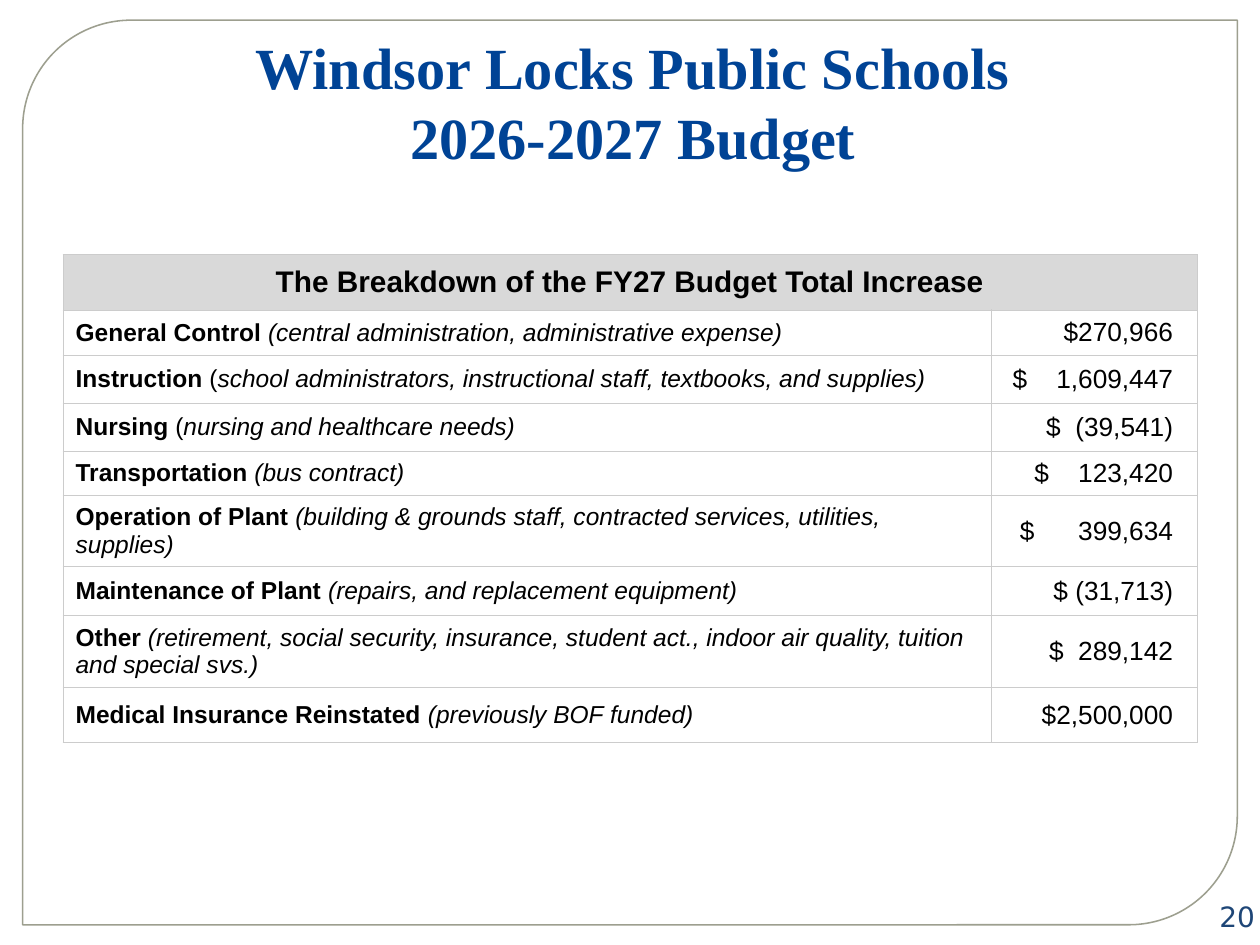
from lxml.etree import SubElement
from pptx import Presentation
from pptx.dml.color import RGBColor
from pptx.enum.shapes import MSO_SHAPE
from pptx.enum.text import MSO_ANCHOR, MSO_AUTO_SIZE, PP_ALIGN
from pptx.oxml.ns import qn
from pptx.util import Inches, Pt

BLACK = RGBColor(0x00, 0x00, 0x00)
WHITE = RGBColor(0xFF, 0xFF, 0xFF)
BLUE = RGBColor(0x00, 0x43, 0x95)
NAVY = RGBColor(0x1E, 0x46, 0x77)
OLIVE = RGBColor(0x9D, 0x9F, 0x8F)
GRAY = RGBColor(0xD9, 0xD9, 0xD9)
RULE = RGBColor(0xCC, 0xCC, 0xCC)

SPACE = 417
COLS = (7.37, 1.63)
HEAD = "The Breakdown of the FY27 Budget Total Increase"
HEAD_H = 0.44
ROWS = [
    (0.36, "General Control ", "", "(central administration, administrative expense)", 0, "270,966"),
    (0.38, "Instruction", " (", "school administrators, instructional staff, textbooks, and supplies)", 4, "1,609,447"),
    (0.38, "Nursing ", "(", "nursing and healthcare needs)", 2, "(39,541)"),
    (0.35, "Transportation ", "", "(bus contract)", 4, "123,420"),
    (0.36, "Operation of Plant ", "",
     "(building & grounds staff, contracted services, utilities, supplies)", 6, "399,634"),
    (0.39, "Maintenance of Plant ", "", "(repairs, and replacement equipment)", 1, "(31,713)"),
    (0.51, "Other ", "",
     "(retirement, social security, insurance, student act., indoor air quality, tuition and special svs.)",
     2, "289,142"),
    (0.44, "Medical Insurance Reinstated ", "", "(previously BOF funded)", 0, "2,500,000"),
]


def place(shape, box):
    """Move a shape to a box given in inches."""
    shape.left, shape.top, shape.width, shape.height = map(Inches, box)


def style(font, name, size, color, bold=None):
    """Set the face, size, colour and weight of a font."""
    font.name, font.size, font.bold = name, Pt(size), bold
    font.color.rgb = color


def pad(item, left, top, right, bottom):
    """Set the four margins of a cell or text frame."""
    item.margin_left, item.margin_top = Inches(left), Inches(top)
    item.margin_right, item.margin_bottom = Inches(right), Inches(bottom)


def add_frame(slide, box):
    """Draw the page outline with two opposite round corners."""
    frame = slide.shapes.add_shape(MSO_SHAPE.ROUND_2_DIAG_RECTANGLE, *map(Inches, box))
    frame.adjustments[0], frame.adjustments[1] = 0.12, 0
    frame.shadow.inherit = False
    frame.fill.background()
    frame.line.color.rgb = OLIVE
    frame.line.width = Pt(0.87)


def add_title(slide, box):
    """Fill the title placeholder with the two-line heading."""
    title = slide.shapes.title
    place(title, box)
    text = title.text_frame
    text.text = "Windsor Locks Public Schools\v2026-2027 Budget"
    text.auto_size = MSO_AUTO_SIZE.NONE
    text.word_wrap = True
    text.vertical_anchor = MSO_ANCHOR.TOP
    pad(text, 0.14, 0.08, 0.1, 0.05)
    line = text.paragraphs[0]
    line.alignment = PP_ALIGN.CENTER
    line.line_spacing = Pt(40)
    style(line.font, "Times New Roman", 33.3, BLUE, True)


def add_number(slide, box):
    """Write the page number at the right of its box."""
    text = slide.shapes.add_textbox(*map(Inches, box)).text_frame
    text.text = "20"
    text.word_wrap = True
    text.vertical_anchor = MSO_ANCHOR.MIDDLE
    pad(text, 0, 0, 0, 0)
    line = text.paragraphs[0]
    line.alignment = PP_ALIGN.RIGHT
    style(line.font, "DejaVu Sans", 16, NAVY)


def dress(cell, color):
    """Give a cell its thin borders and fill."""
    props = cell._tc.get_or_add_tcPr()
    for side in ("lnL", "lnR", "lnT", "lnB"):
        edge = SubElement(props, qn(f"a:{side}"), w=str(Pt(0.6)))
        fill = SubElement(edge, qn("a:solidFill"))
        SubElement(fill, qn("a:srgbClr"), val=str(RULE))
    cell.fill.solid()
    cell.fill.fore_color.rgb = color
    cell.vertical_anchor = MSO_ANCHOR.MIDDLE


def write_label(cell, name, mark, note):
    """Write a bold name, a plain mark and an italic note."""
    pad(cell, 0.1, 0.05, 0.1, 0.05)
    line = cell.text_frame.paragraphs[0]
    for text, bold, italic in ((name, True, False), (mark, False, False), (note, False, True)):
        if text:
            run = line.add_run()
            run.text = text
            run.font.bold, run.font.italic = bold, italic
    style(line.font, "Arial", 14, BLACK)


def write_sum(cell, gap, value):
    """Write a dollar sign and an amount, set apart by a stretched space."""
    pad(cell, 0.1, 0.05, 0.19, 0.05)
    line = cell.text_frame.paragraphs[0]
    line.alignment = PP_ALIGN.RIGHT
    for text in ("$", " ", value) if gap else ("$" + value,):
        run = line.add_run()
        run.text = text
        if text == " ":
            run._r.get_or_add_rPr().set("spc", str(SPACE * (gap - 1)))
    style(line.font, "Arial", 15, BLACK)


def add_budget(slide, box):
    """Build the table of budget increases."""
    table = slide.shapes.add_table(len(ROWS) + 1, len(COLS), *map(Inches, box)).table
    table.first_row = table.horz_banding = False
    for col, width in zip(table.columns, COLS):
        col.width = Inches(width)
    for row, height in zip(table.rows, [HEAD_H] + [item[0] for item in ROWS]):
        row.height = Inches(height)
    for i, row in enumerate(table.rows):
        for cell in row.cells:
            dress(cell, WHITE if i else GRAY)
    head = table.cell(0, 0)
    head.merge(table.cell(0, 1))
    pad(head, 0.02, 0.01, 0.02, 0.01)
    line = head.text_frame.paragraphs[0]
    line.text = HEAD
    line.alignment = PP_ALIGN.CENTER
    style(line.font, "Arial", 17, BLACK, True)
    for i, (_, name, mark, note, gap, value) in enumerate(ROWS, 1):
        write_label(table.cell(i, 0), name, mark, note)
        write_sum(table.cell(i, 1), gap, value)


def main():
    """Build and save the budget slide."""
    deck = Presentation()
    deck.slide_width, deck.slide_height = Inches(10), Inches(7.5)
    slide = deck.slides.add_slide(deck.slide_layouts[5])
    add_frame(slide, (0.18, 0.16, 9.64, 7.18))
    add_number(slide, (9.45, 7.12, 0.51, 0.3))
    add_title(slide, (0.1, 0.17, 9.81, 1.66))
    add_budget(slide, (0.5, 2.02, sum(COLS), 3.61))
    deck.save("out.pptx")


if __name__ == "__main__":
    main()
